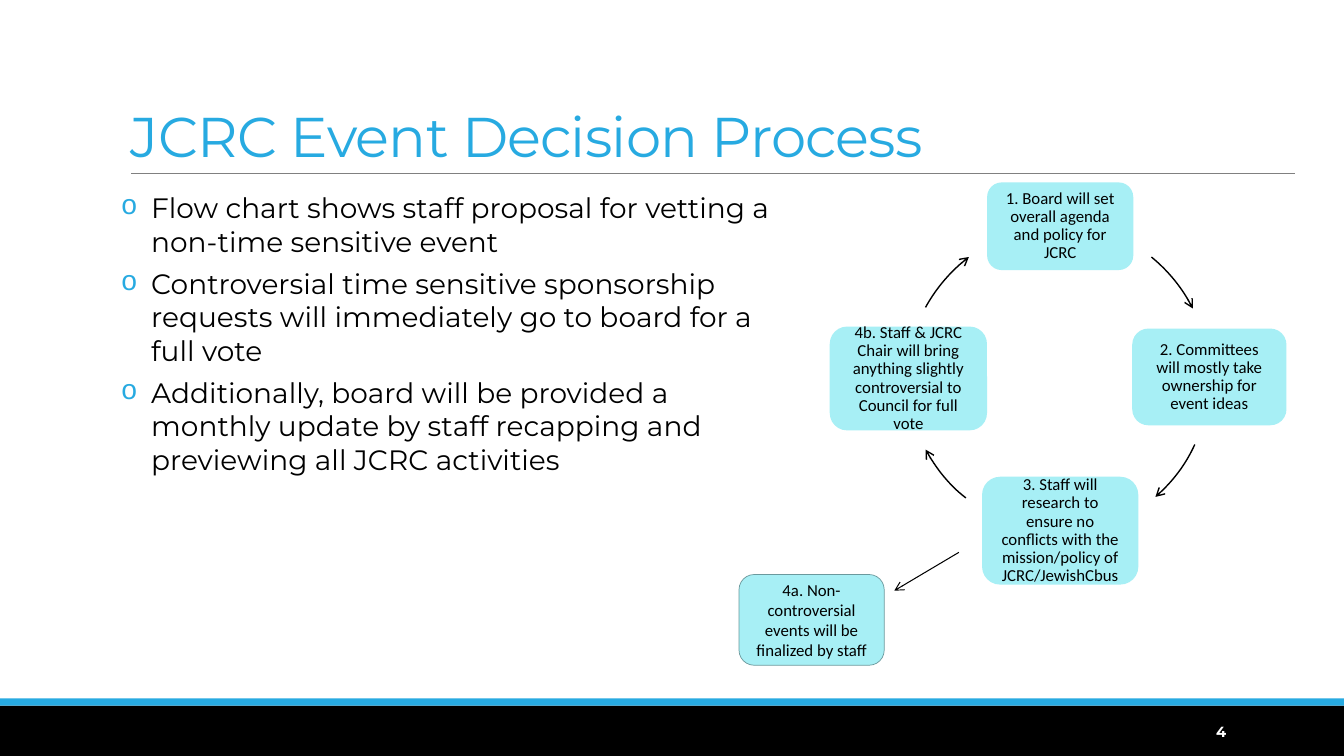
import dataclasses

import pptx
import pptx.dml.color
import pptx.enum.shapes
import pptx.enum.text
import pptx.oxml.ns
import pptx.util
from lxml import etree

Inches = pptx.util.Inches
Kind = pptx.enum.shapes.MSO_SHAPE
Align = pptx.enum.text.PP_ALIGN
Anchor = pptx.enum.text.MSO_ANCHOR
qn = pptx.oxml.ns.qn


@dataclasses.dataclass(frozen=True)
class Theme:
    black: str = "000000"
    white: str = "FFFFFF"
    blue: str = "27AAE1"
    aqua: str = "A7EFF5"
    teal: str = "6B999D"
    gray: str = "808080"
    main: str = "Montserrat"
    card: str = "Calibri"
    title: float = 40
    body: float = 20
    small: float = 12
    page: float = 10.5


@dataclasses.dataclass(frozen=True)
class Box:
    x: float
    y: float
    w: float
    h: float

    def inner(self, x, y, w, h):
        return Box(self.x + x, self.y + y, w, h)

    def point(self, x, y):
        return self.x + x, self.y + y

    def sides(self):
        return [Inches(v) for v in (self.x, self.y, self.w, self.h)]


theme = Theme()


def color(code):
    return pptx.dml.color.RGBColor.from_string(code)


def add_run(para, text, size, font, code, bold=False):
    run = para.add_run()
    run.text = text
    run.font.size = pptx.util.Pt(size)
    run.font.name = font
    run.font.bold = bold
    run.font.color.rgb = color(code)
    return run


def set_frame(shape, anchor, side=0.1):
    frame = shape.text_frame
    frame.word_wrap = True
    frame.vertical_anchor = anchor
    frame.margin_left = frame.margin_right = Inches(side)
    frame.margin_top = frame.margin_bottom = Inches(0.05)
    return frame


def add_block(slide, kind, box, fill, edge=None):
    shape = slide.shapes.add_shape(kind, *box.sides())
    shape.shadow.inherit = False
    shape.fill.solid()
    shape.fill.fore_color.rgb = color(fill)
    if edge:
        shape.line.color.rgb = color(edge)
        shape.line.width = pptx.util.Pt(0.5)
    else:
        shape.line.fill.background()
    return shape


def add_card(slide, kind, box, text, space, edge=None):
    shape = add_block(slide, kind, box, theme.aqua, edge)
    para = set_frame(shape, Anchor.MIDDLE).paragraphs[0]
    para.alignment = Align.CENTER
    para.line_spacing = space
    add_run(para, text, theme.small, theme.card, theme.black)


def style_line(line, code, width, arrow=False):
    line.line.color.rgb = color(code)
    line.line.width = pptx.util.Pt(width)
    if arrow:
        tail = etree.SubElement(line.get_or_add_ln(), qn("a:tailEnd"))
        tail.set("type", "arrow")


def add_line(slide, start, end, code, width, arrow=False):
    ends = [Inches(v) for v in (*start, *end)]
    line = slide.shapes.add_connector(pptx.enum.shapes.MSO_CONNECTOR.STRAIGHT, *ends)
    style_line(line, code, width, arrow)
    etree.SubElement(line._element.spPr, qn("a:effectLst"))


def add_curve(slide, knots, steps=16):
    def spot(t):
        shares = ((1 - t) ** 3, 3 * t * (1 - t) ** 2, 3 * t * t * (1 - t), t ** 3)
        return tuple(Inches(sum(s * k[axis] for s, k in zip(shares, knots))) for axis in (0, 1))

    spots = [spot(n / steps) for n in range(steps + 1)]
    form = slide.shapes.build_freeform(*spots[0])
    form.add_line_segments(spots[1:], close=False)
    curve = form.convert_to_shape()
    curve.shadow.inherit = False
    curve.fill.background()
    style_line(curve, theme.black, 1, arrow=True)


def draw_title(slide, box):
    rule = box.y + box.h
    add_line(slide, (box.x + 0.1, rule), (box.x + box.w, rule), theme.gray, 0.5)
    frame = set_frame(slide.shapes.add_textbox(*box.sides()), Anchor.BOTTOM)
    run = add_run(frame.paragraphs[0], "JCRC Event Decision Process",
                  theme.title, theme.main, theme.blue)
    run._r.get_or_add_rPr().set("spc", "-50")


def draw_list(slide, box):
    items = (
        "Flow chart shows staff proposal for vetting a non-time sensitive event",
        "Controversial time sensitive sponsorship requests will immediately go to board for a full vote",
        "Additionally, board will be provided a monthly update by staff recapping and previewing all JCRC activities",
    )
    frame = set_frame(slide.shapes.add_textbox(*box.sides()), Anchor.TOP, side=0)
    for n, text in enumerate(items):
        para = frame.add_paragraph() if n else frame.paragraphs[0]
        para.space_after = pptx.util.Pt(6)
        props = para._p.get_or_add_pPr()
        props.set("marL", str(Inches(0.3)))
        props.set("indent", str(Inches(-0.3)))
        tint = etree.SubElement(props, qn("a:buClr"))
        etree.SubElement(tint, qn("a:srgbClr")).set("val", theme.blue)
        etree.SubElement(props, qn("a:buFont")).set("typeface", "Courier New")
        etree.SubElement(props, qn("a:buChar")).set("char", "o")
        add_run(para, text, theme.body, theme.main, theme.black)


def draw_flow(slide, box):
    cards = (
        ((2.46, 0, 1.45, 0.87), "1. Board will set overall agenda and policy for JCRC"),
        ((3.9, 1.45, 1.53, 0.96), "2. Committees will mostly take ownership for event ideas"),
        ((2.41, 2.92, 1.55, 1.07),
         "3. Staff will research to ensure no conflicts with the mission/policy of JCRC/JewishCbus"),
        ((0.9, 1.43, 1.56, 1.03),
         "4b. Staff & JCRC Chair will bring anything slightly controversial to Council for full vote"),
    )
    curves = (
        ((4.09, 0.74), (4.26, 0.88), (4.4, 1.05), (4.5, 1.25)),
        ((4.52, 2.6), (4.43, 2.8), (4.3, 2.97), (4.13, 3.12)),
        ((2.25, 3.13), (2.08, 3), (1.95, 2.83), (1.85, 2.65)),
        ((1.85, 1.24), (1.96, 1.04), (2.11, 0.87), (2.28, 0.74)),
    )
    for (place, text), knots in zip(cards, curves):
        add_card(slide, Kind.ROUNDED_RECTANGLE, box.inner(*place), text, 0.9)
        add_curve(slide, [box.point(*knot) for knot in knots])
    add_line(slide, box.point(2.18, 3.67), box.point(1.54, 4.05), theme.black, 0.75, arrow=True)
    add_card(slide, Kind.FLOWCHART_ALTERNATE_PROCESS, box.inner(0, 3.89, 1.44, 0.9),
             "4a. Non-controversial events will be finalized by staff", 1.0, theme.teal)


def draw_foot(slide, box):
    add_block(slide, Kind.RECTANGLE, box.inner(0, 0.07, box.w, 0.5), theme.black)
    add_block(slide, Kind.RECTANGLE, box.inner(0, 0, box.w, 0.07), theme.blue)
    place = box.inner(10.83, 0.13, 1.43, 0.4)
    frame = set_frame(slide.shapes.add_textbox(*place.sides()), Anchor.MIDDLE)
    para = frame.paragraphs[0]
    para.alignment = Align.RIGHT
    add_run(para, "4", theme.page, theme.main, theme.white, bold=True)


def main():
    deck = pptx.Presentation()
    deck.slide_width, deck.slide_height = Inches(13.33), Inches(7.5)
    slide = deck.slides.add_slide(deck.slide_layouts[6])
    draw_foot(slide, Box(0, 6.93, 13.33, 0.57))
    draw_title(slide, Box(1.2, 0.31, 11.64, 1.41))
    draw_list(slide, Box(1.2, 1.84, 6.63, 4.96))
    draw_flow(slide, Box(7.33, 1.81, 5.43, 4.79))
    deck.save("out.pptx")


if __name__ == "__main__":
    main()
